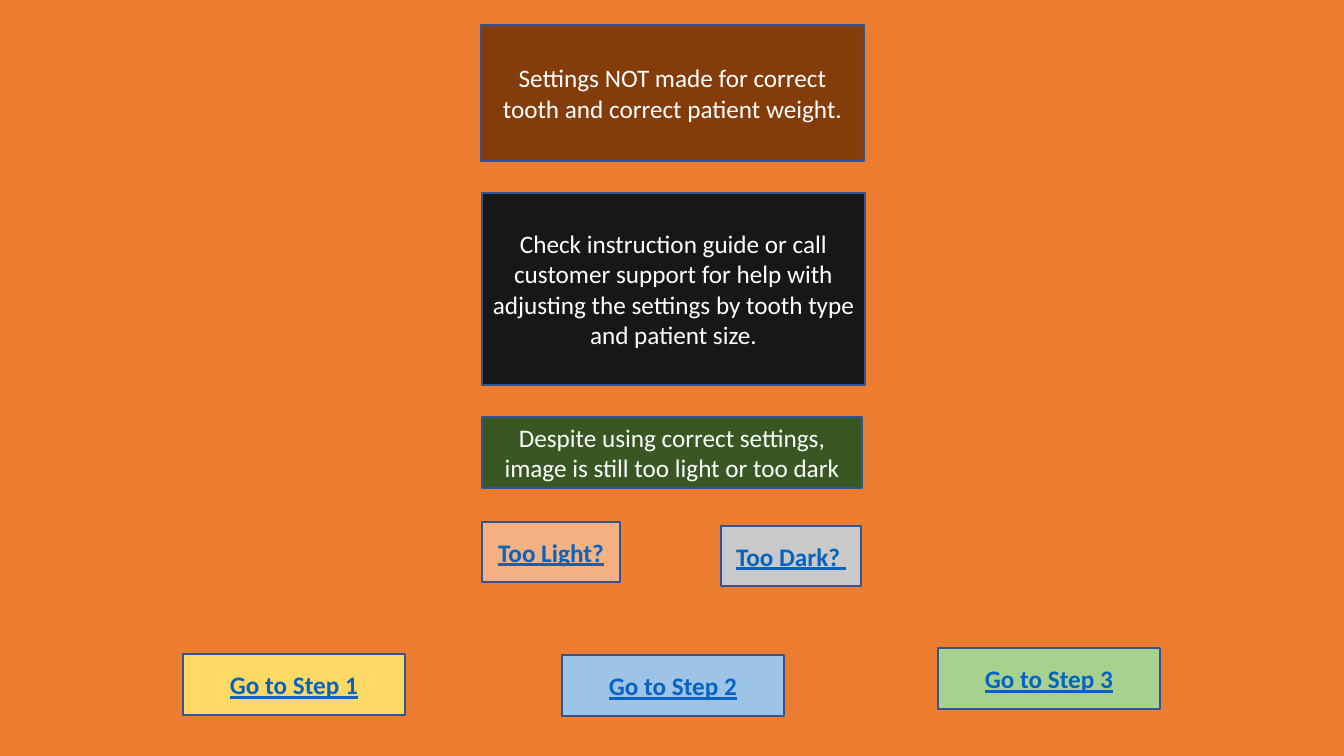
from pptx import Presentation
from pptx.dml.color import RGBColor
from pptx.enum.shapes import MSO_SHAPE
from pptx.enum.text import MSO_ANCHOR, PP_ALIGN
from pptx.util import Pt

PX = 914400 / 100.8

ORANGE = RGBColor(0xED, 0x7D, 0x31)
BROWN = RGBColor(0x84, 0x3C, 0x0B)
BLACK = RGBColor(0x18, 0x17, 0x17)
DARK_GREEN = RGBColor(0x38, 0x57, 0x23)
PEACH = RGBColor(0xF4, 0xB1, 0x83)
GREY = RGBColor(0xC9, 0xC9, 0xC9)
YELLOW = RGBColor(0xFF, 0xD9, 0x66)
LIGHT_BLUE = RGBColor(0x9D, 0xC3, 0xE6)
LIGHT_GREEN = RGBColor(0xA9, 0xD1, 0x8E)
OUTLINE = RGBColor(0x32, 0x54, 0x91)
LINK_BLUE = RGBColor(0x05, 0x63, 0xC1)
WHITE = RGBColor(0xFF, 0xFF, 0xFF)


def px(n):
    return round(n * PX)


def add_box(s, kind, box, fill, text, is_button):
    sp = s.shapes.add_shape(kind, *[px(n) for n in box])
    sp.shadow.inherit = False
    sp.fill.solid()
    sp.fill.fore_color.rgb = fill
    sp.line.color.rgb = OUTLINE
    sp.line.width = Pt(1)
    tf = sp.text_frame
    tf.word_wrap = True
    tf.vertical_anchor = MSO_ANCHOR.MIDDLE
    tf.text = text
    p = tf.paragraphs[0]
    p.alignment = PP_ALIGN.CENTER
    font = p.runs[0].font
    font.name = "Calibri"
    font.size = Pt(18)
    font.bold = is_button
    font.underline = is_button
    font.color.rgb = LINK_BLUE if is_button else WHITE


prs = Presentation()
prs.slide_width = px(1344)
prs.slide_height = px(756)
s = prs.slides.add_slide(prs.slide_layouts[6])
s.background.fill.solid()
s.background.fill.fore_color.rgb = ORANGE

messages = [
    ((481, 25, 383, 136), BROWN,
     "Settings NOT made for correct tooth and correct patient weight."),
    ((482, 193, 383, 192), BLACK,
     "Check instruction guide or call customer support for help with "
     "adjusting the settings by tooth type and patient size."),
    ((482, 417, 380, 71), DARK_GREEN,
     "Despite using correct settings, image is still too light or too dark"),
]
for box, fill, text in messages:
    add_box(s, MSO_SHAPE.FLOWCHART_PROCESS, box, fill, text, False)

choices = [
    ((482, 522, 138, 60), PEACH, "Too Light?"),
    ((721, 526, 140, 60), GREY, "Too Dark? "),
]
for box, fill, text in choices:
    add_box(s, MSO_SHAPE.FLOWCHART_PROCESS, box, fill, text, True)

steps = [(183, 654, YELLOW), (562, 655, LIGHT_BLUE), (938, 648, LIGHT_GREEN)]
for number, (left, top, fill) in enumerate(steps, 1):
    add_box(s, MSO_SHAPE.RECTANGLE, (left, top, 222, 61), fill,
            f"Go to Step {number}", True)

prs.save("out.pptx")
